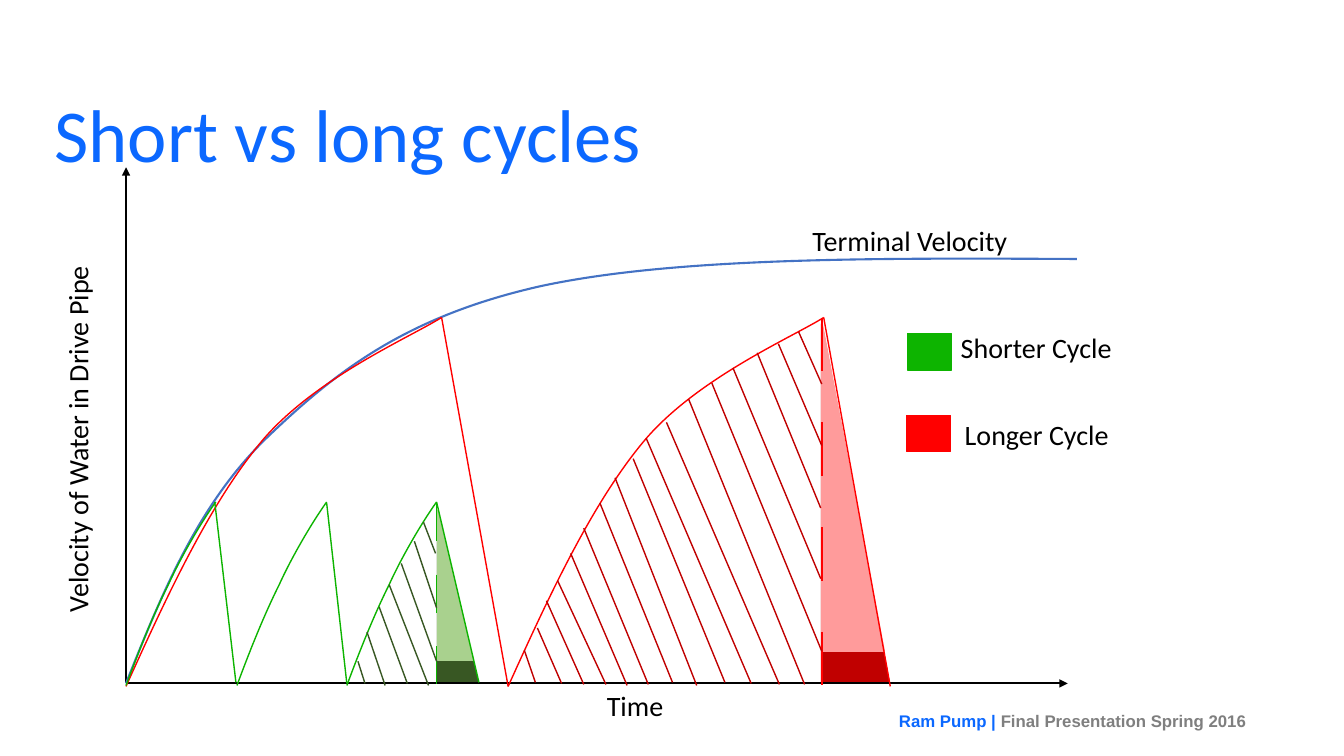
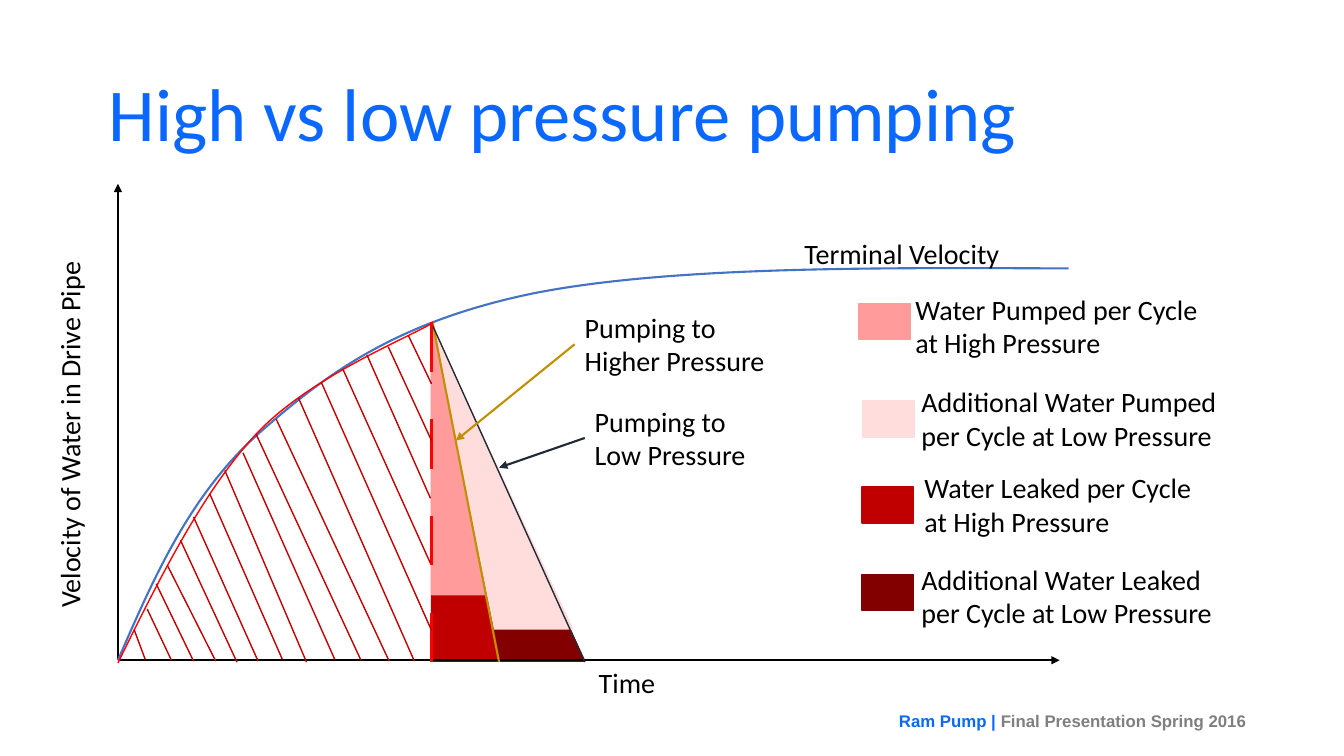
import pptx
import pptx.util
import pptx.dml.color
import pptx.enum.shapes
import pptx.enum.text
import pptx.oxml
import pptx.oxml.ns
import lxml.etree

Inches, Pt = pptx.util.Inches, pptx.util.Pt
SHAPE = pptx.enum.shapes.MSO_SHAPE
STRAIGHT = pptx.enum.shapes.MSO_CONNECTOR.STRAIGHT
ANCHOR = pptx.enum.text.MSO_ANCHOR
ALIGN = pptx.enum.text.PP_ALIGN
AUTO = pptx.enum.text.MSO_AUTO_SIZE
qn = pptx.oxml.ns.qn


def rgb(value):
    return pptx.dml.color.RGBColor.from_string(value)


def stroke(s, plot, points, color, width=1, arrow=False):
    """Two points make a straight line, more are Bezier knots and controls.

    Points are (distance along the time axis, height above it).
    """
    x0, y0, scale = plot
    pts = [(Inches(x0 + x), Inches(y0 - y * scale)) for x, y in points]
    if len(pts) == 2:
        sp = s.shapes.add_connector(STRAIGHT, *pts[0], *pts[1])
    else:
        builder = s.shapes.build_freeform(*pts[0])
        builder.add_line_segments(pts[1:], close=False)
        sp = builder.convert_to_shape()
        sp.fill.background()
        # Turn each three line segments into one cubic curve
        segments = list(sp._element.iter(qn("a:lnTo")))
        for k in range(0, len(segments), 3):
            curve = lxml.etree.Element(qn("a:cubicBezTo"))
            segments[k].addprevious(curve)
            for segment in segments[k:k + 3]:
                curve.append(segment[0])
                segment.getparent().remove(segment)
    sp.line.color.rgb = rgb(color)
    sp.line.width = Pt(width)
    spPr = sp._element.spPr
    if arrow:
        lxml.etree.SubElement(spPr.find(qn("a:ln")), qn("a:tailEnd"), type="triangle")
    lxml.etree.SubElement(spPr, qn("a:effectLst"))
    return sp


# Shared colours and text styles
BLUE, GRAY, BLACK = "0B68FF", "7F7F7F", "000000"
CURVE, RED, DARK_RED, PINK = "4472C4", "FF0000", "C00000", "FF9B9B"
PALE_PINK, MAROON, GOLD, NAVY = "FFDDDD", "820000", "BF9000", "222A35"
GREEN, DARK_GREEN, PALE_GREEN = "0DB400", "385723", "A9D18E"
TITLE = {"name": "Calibri", "size": Pt(53.3)}
LABEL = {"name": "Calibri", "size": Pt(20)}
FOOTER = {"name": "Arial", "size": Pt(12), "bold": True}
FOOTER_RUNS = [("Ram Pump | ", BLUE), ("Final Presentation Spring 2016", GRAY)]

# Curves of the plot, each from the start of its cycle
TERMINAL = [(0, 0), (0.36, 0.9), (0.72, 1.79), (1.41, 2.45), (2.09, 3.1), (2.78, 3.64),
            (4.11, 3.94), (5.45, 4.23), (7.45, 4.22), (9.43, 4.21)]
LONG = [(0, -0.03), (0.42, 0.9), (0.85, 1.82), (1.37, 2.43), (1.9, 3.04), (2.83, 3.44),
        (3.13, 3.63)]
SHORT = [(0, -0.02), (0.13, 0.33), (0.27, 0.68), (0.42, 0.98), (0.56, 1.29), (0.78, 1.65),
         (0.89, 1.8)]

# Hatching: x and height on the curve, then x and height at the lower end
LONG_HATCH = [
    (0.16, 0.33, 0.27, 0.01), (0.29, 0.55, 0.53, 0), (0.38, 0.82, 0.75, -0.01),
    (0.49, 1.02, 0.97, -0.01), (0.62, 1.29, 1.18, -0.02), (0.75, 1.54, 1.39, -0.01),
    (0.91, 1.79, 1.63, 0.01), (1.06, 2.04, 1.87, -0.02), (1.24, 2.23, 2.15, 0.01),
    (1.37, 2.43, 2.41, 0), (1.57, 2.59, 2.69, -0.01), (1.79, 2.82, 2.94, -0.01),
    (2.02, 2.98, 3.11, 0.32), (2.23, 3.13, 3.1, 1.04), (2.47, 3.28, 3.1, 1.74),
    (2.68, 3.37, 3.11, 2.36), (2.88, 3.49, 3.11, 2.97)]
SHORT_HATCH = [
    (0.11, 0.22, 0.18, 0), (0.2, 0.51, 0.38, -0.02), (0.32, 0.76, 0.6, 0),
    (0.42, 0.98, 0.81, -0.02), (0.54, 1.19, 0.89, 0.22), (0.67, 1.41, 0.89, 0.75),
    (0.76, 1.6, 0.88, 1.29)]

# Dashed drop lines: x, top, dash length, step, count, width
LONG_DASH = (3.11, 3.63, 0.53, 1.04, 4, 1.5)
SHORT_DASH = (0.89, 1.79, 0.38, 0.71, 3, 1)

# What differs between the slides; plot is axis origin and height scale
slides = [
    {"title": "Short vs long cycles", "title_at": (0.36, 0.93),
     "plot": (1.25, 6.78, 1),
     "wedges": [(8.15, 3.21, 0.67, 3.56, DARK_RED), (8.15, 3.19, 0.62, 3.27, PINK),
                (4.34, 5.07, 0.4, 1.69, DARK_GREEN), (4.34, 5.06, 0.35, 1.49, PALE_GREEN)],
     "cycles": [(LONG, 0, RED), (LONG, 3.79, RED),
                (SHORT, 0, GREEN), (SHORT, 1.1, GREEN), (SHORT, 2.19, GREEN)],
     "falls": [((3.13, 3.63), (3.79, -0.03), RED, 1), ((6.92, 3.63), (7.58, -0.03), RED, 1),
               ((0.88, 1.8), (1.09, 0.01), GREEN, 1), ((1.99, 1.79), (2.19, 0), GREEN, 1),
               ((3.08, 1.8), (3.5, 0.01), GREEN, 1)],
     "filled": [(3.79, LONG_HATCH, DARK_RED, LONG_DASH, RED),
                (2.19, SHORT_HATCH, DARK_GREEN, SHORT_DASH, GREEN)],
     "swatches": [(9, 3.31, 0.44, GREEN), (8.99, 4.12, 0.44, RED)],
     "legend": [("Shorter Cycle", 9.43, 3.23, 1.71), ("Longer Cycle", 9.47, 4.09, 1.64)],
     "callouts": []},
    {"title": "High vs low pressure pumping", "title_at": (0.9, 0.72),
     "plot": (1.17, 6.55, 12 / 13),
     "wedges": [(4.29, 3.28, 1.51, 3.28, MAROON), (4.29, 3.26, 1.39, 2.98, PALE_PINK),
                (4.28, 3.25, 0.67, 3.28, DARK_RED), (4.28, 3.23, 0.54, 2.67, PINK)],
     "cycles": [(LONG, 0, RED)],
     "falls": [((3.12, 3.63), (3.78, -0.02), GOLD, 1.5), ((3.12, 3.6), (4.63, -0.02), NAVY, 1)],
     "filled": [(0, LONG_HATCH, DARK_RED, LONG_DASH, RED)],
     "swatches": [(8.52, 3.01, 0.51, PINK), (8.56, 3.98, 0.51, PALE_PINK),
                  (8.55, 4.83, 0.51, DARK_RED), (8.55, 5.7, 0.51, MAROON)],
     "legend": [("Water Pumped per Cycle\nat High Pressure", 8.98, 2.85, 3.09),
                ("Additional Water Pumped\nper Cycle at Low Pressure", 9.04, 3.77, 3.22),
                ("Water Leaked per Cycle\nat High Pressure", 9.07, 4.62, 2.94),
                ("Additional Water Leaked\nper Cycle at Low Pressure", 9.04, 5.53, 3.11)],
     "callouts": [("Pumping to\nHigher Pressure", 5.7, 3.03, 2.01, (3.35, 2.36), GOLD),
                  ("Pumping to\nLow Pressure", 5.8, 3.96, 1.71, (3.78, 2.07), NAVY)]},
]

prs = pptx.Presentation()
prs.slide_width, prs.slide_height = Inches(13.33), Inches(7.5)

for info in slides:
    s = prs.slides.add_slide(prs.slide_layouts[5])
    plot = x0, y0, scale = info["plot"]

    # Title
    sp = s.shapes.title
    sp.left, sp.top = (Inches(v) for v in info["title_at"])
    sp.width, sp.height = min(Inches(12.75), prs.slide_width - sp.left), Inches(1.02)
    tf = sp.text_frame
    frame = {"word_wrap": True, "auto_size": AUTO.NONE, "vertical_anchor": ANCHOR.BOTTOM}
    frame.update({f"margin_{side}": Inches(0.18) for side in ("left", "right", "top", "bottom")})
    for key, value in frame.items():
        setattr(tf, key, value)
    p = tf.paragraphs[0]
    p.alignment, p.line_spacing = ALIGN.LEFT, 0.9
    r = p.add_run()
    r.text = info["title"]
    r.font.color.rgb = rgb(BLUE)
    for key, value in TITLE.items():
        setattr(r.font, key, value)

    # Footer
    sp = s.shapes.add_textbox(Inches(7.96), Inches(6.95), Inches(4.5), Inches(0.4))
    tf = sp.text_frame
    tf.word_wrap, tf.vertical_anchor = True, ANCHOR.MIDDLE
    p = tf.paragraphs[0]
    p.alignment = ALIGN.RIGHT
    for text, color in FOOTER_RUNS:
        r = p.add_run()
        r.text = text
        r.font.color.rgb = rgb(color)
        for key, value in FOOTER.items():
            setattr(r.font, key, value)

    # Pumped and leaked areas, legend swatches
    areas = [(SHAPE.RIGHT_TRIANGLE, *wedge) for wedge in info["wedges"]]
    areas += [(SHAPE.RECTANGLE, x, y, w, 0.36, color) for x, y, w, color in info["swatches"]]
    for kind, x, y, w, h, color in areas:
        sp = s.shapes.add_shape(kind, Inches(x), Inches(y), Inches(w), Inches(h))
        sp.shadow.inherit = False
        sp.fill.solid()
        sp.fill.fore_color.rgb = sp.line.color.rgb = rgb(color)
        sp.line.width = Pt(1)

    # Axes and terminal velocity
    for tip in ((0, 5.12), (9.34, 0)):
        stroke(s, plot, [(0, 0), tip], BLACK, 1.5, arrow=True)
    stroke(s, plot, TERMINAL, CURVE, 1.5)

    # Cycles: rising, then falling velocity
    for curve, start, color in info["cycles"]:
        stroke(s, plot, [(start + x, y) for x, y in curve], color)
    for peak, foot, color, width in info["falls"]:
        stroke(s, plot, [peak, foot], color, width)

    # Hatching and dashed drop lines
    for start, hatch, hatch_color, dash, dash_color in info["filled"]:
        x, top, length, step, count, width = dash
        for y in (top - i * step for i in range(count)):
            stroke(s, plot, [(start + x, y), (start + x, y - length)], dash_color, width)
        for xa, ya, xb, yb in hatch:
            stroke(s, plot, [(start + xa, ya), (start + xb, yb)], hatch_color)

    # Labels, with an arrow from each callout
    labels = [("Velocity of Water in Drive Pipe", x0 - 2.31, y0 - 2.44 * scale - 0.22, 3.66),
              ("Time", x0 + 4.67, y0, 0.77),
              ("Terminal Velocity", x0 + 6.71, y0 - 4.61 * scale, 2.15)]
    for text, x, y, w, *callout in labels + info["legend"] + info["callouts"]:
        h = 0.77 if "\n" in text else 0.44
        sp = s.shapes.add_textbox(Inches(x), Inches(y), Inches(w), Inches(h))
        if text.startswith("Velocity"):
            sp.rotation = 270
        tf = sp.text_frame
        tf.text = text
        tf.word_wrap, tf.auto_size = False, AUTO.SHAPE_TO_FIT_TEXT
        for p in tf.paragraphs:
            for r in p.runs:
                r.font.color.rgb = rgb(BLACK)
                for key, value in LABEL.items():
                    setattr(r.font, key, value)
        if callout:
            tip, color = callout
            side = (x - x0, (y0 - y - h / 2) / scale)
            stroke(s, plot, [side, tip], color, 1.5, arrow=True).begin_connect(sp, 1)

prs.save("out.pptx")
